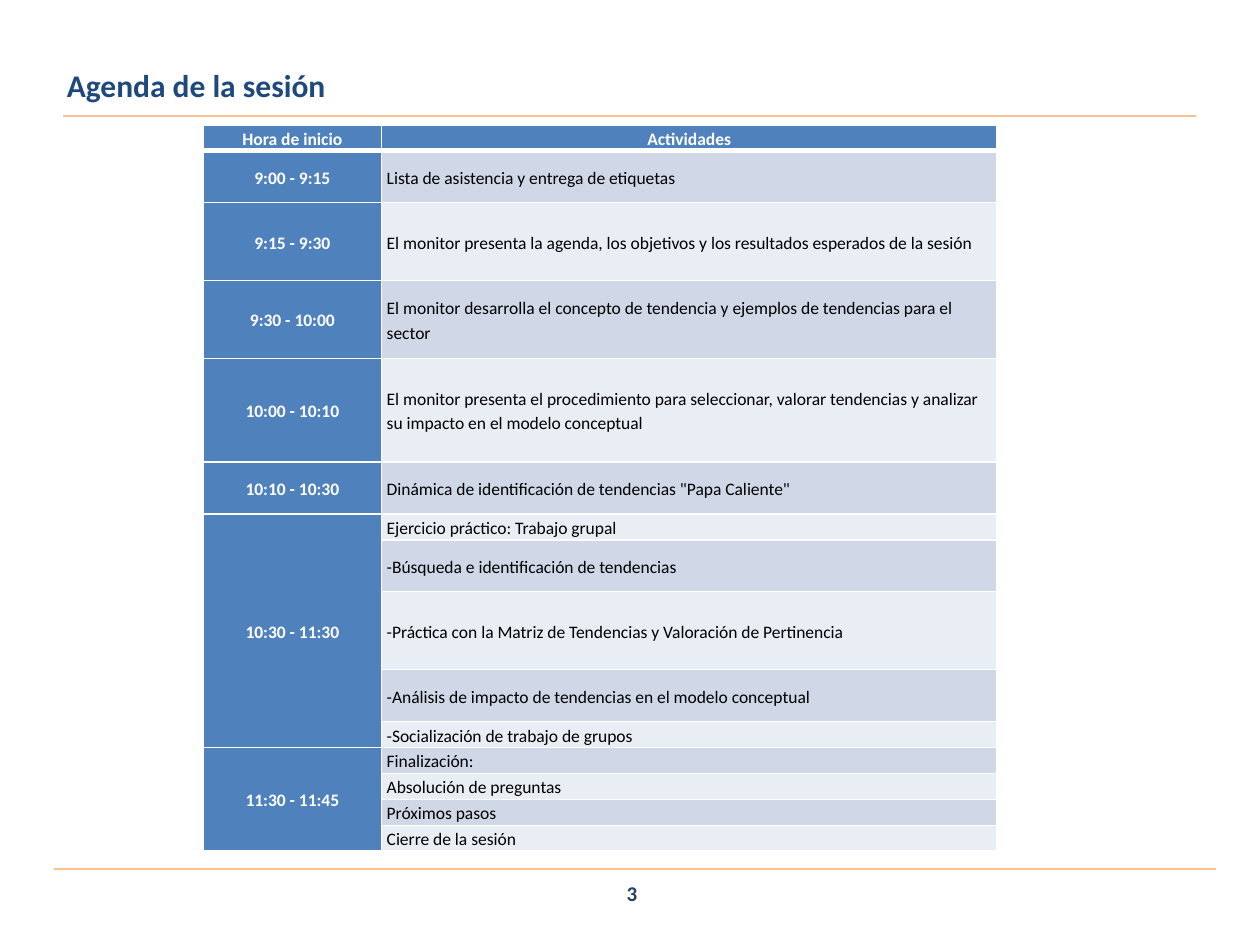
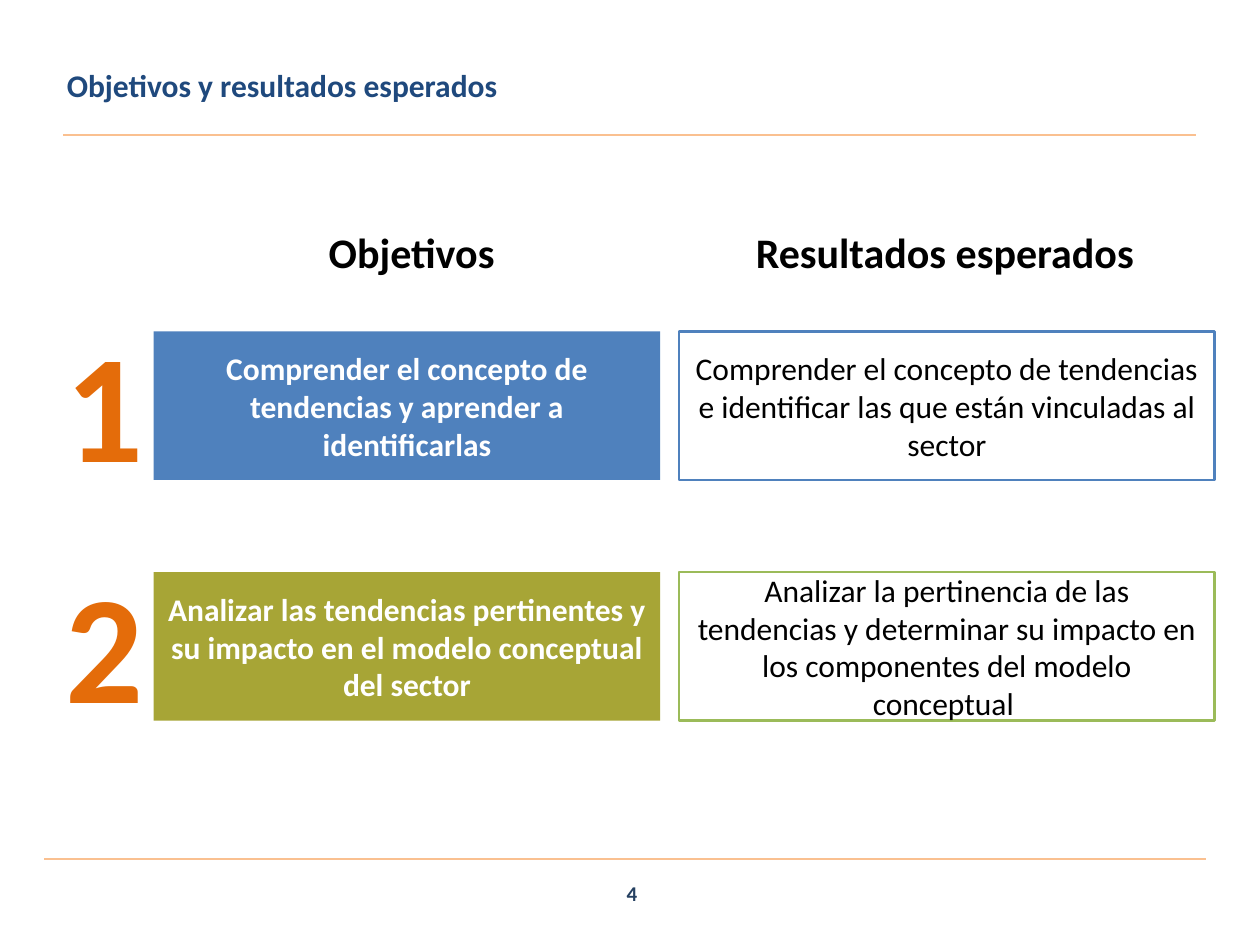
from lxml import etree
from pptx import Presentation
from pptx.dml.color import RGBColor
from pptx.enum.shapes import MSO_CONNECTOR, MSO_SHAPE
from pptx.enum.text import MSO_ANCHOR as ANCHOR, PP_ALIGN as ALIGN
from pptx.oxml.ns import qn
from pptx.util import Inches, Pt

FONT = "Calibri"
NAVY, DEEP_NAVY, BLUE = "1F497D", "254061", "4F81BD"
PEACH, ORANGE, OLIVE, GREEN = "FAC090", "E46C0A", "A7A536", "9BBB59"
BANDS = ("D0D8E8", "E9EDF4")
WHITE, BLACK = "FFFFFF", "000000"

ROW_UNIT = 0.206
# Each slot: start hour, then its activities with their height in row units
AGENDA = [
    ("9:00 - 9:15", [("Lista de asistencia y entrega de etiquetas", 2)]),
    ("9:15 - 9:30", [("El monitor presenta la agenda, los objetivos y los "
                      "resultados esperados de la sesión", 3)]),
    ("9:30 - 10:00", [("El monitor desarrolla el concepto de tendencia y "
                       "ejemplos de tendencias para el sector", 3)]),
    ("10:00 - 10:10", [("El monitor presenta el procedimiento para seleccionar, "
                        "valorar tendencias y analizar su impacto en el modelo "
                        "conceptual", 4)]),
    ("10:10 - 10:30", [('Dinámica de identificación de tendencias "Papa Caliente"', 2)]),
    ("10:30 - 11:30", [("Ejercicio práctico: Trabajo grupal", 1),
                       ("-Búsqueda e identificación de tendencias", 2),
                       ("-Práctica con la Matriz de Tendencias y Valoración de "
                        "Pertinencia", 3),
                       ("-Análisis de impacto de tendencias en el modelo conceptual", 2),
                       ("-Socialización de trabajo de grupos", 1)]),
    ("11:30 - 11:45", [("Finalización:", 1), ("Absolución de preguntas", 1),
                       ("Próximos pasos", 1), ("Cierre de la sesión", 1)]),
]

# Number, objective, its fill, expected result, its outline
GOALS = [
    ("1", "Comprender el concepto de tendencias y aprender a identificarlas", BLUE,
     "Comprender el concepto de tendencias e identificar las que están "
     "vinculadas al sector", BLUE),
    ("2", "Analizar las tendencias pertinentes y su impacto en el modelo "
     "conceptual del sector", OLIVE,
     "Analizar la pertinencia de las tendencias y determinar su impacto en los "
     "componentes del modelo conceptual ", GREEN),
]


def rgb(color):
    return RGBColor.from_string(color)


def set_borders(cell, **widths):
    """White cell borders, 1 pt unless a side (L, R, T, B) is given."""
    tcPr = cell._tc.get_or_add_tcPr()
    for i, side in enumerate("LRTB"):
        ln = etree.Element(qn(f"a:ln{side}"), w=str(Pt(widths.get(side, 1))))
        fill = etree.SubElement(ln, qn("a:solidFill"))
        etree.SubElement(fill, qn("a:srgbClr"), val=WHITE)
        tcPr.insert(i, ln)


class Deck:
    def __init__(self):
        self.prs = Presentation()
        self.prs.slide_width, self.prs.slide_height = Inches(10), Inches(7.5)
        self.s = None

    def put_text(self, tf, text, size, color=BLACK, bold=False, align=ALIGN.CENTER,
                 anchor=ANCHOR.MIDDLE, **paragraph):
        tf.word_wrap = True
        tf.vertical_anchor = anchor
        p = tf.paragraphs[0]
        for name, value in dict(alignment=align, **paragraph).items():
            setattr(p, name, value)
        r = p.add_run()
        r.text = text
        for name, value in dict(name=FONT, size=Pt(size), bold=bold).items():
            setattr(r.font, name, value)
        r.font.color.rgb = rgb(color)

    def slide(self, title, number, top_rule, bottom_rule, bottom_left):
        self.s = self.prs.slides.add_slide(self.prs.slide_layouts[5])
        sp = self.s.shapes.title
        place = dict(left=0.43, top=0.44, width=8.99, height=0.47)
        for name, value in place.items():
            setattr(sp, name, Inches(value))
        self.put_text(sp.text_frame, title, 18, NAVY, True, ALIGN.JUSTIFY,
                      space_before=Pt(3.6))
        self.rule(0.5, top_rule, 8.99)
        self.rule(bottom_left, bottom_rule, 9.22)
        self.text(number, 3.85, 6.89, 2.33, 0.4, size=12, color=DEEP_NAVY,
                  anchor=ANCHOR.MIDDLE)

    def rule(self, x, y, width):
        line = self.s.shapes.add_connector(
            MSO_CONNECTOR.STRAIGHT, Inches(x), Inches(y), Inches(x + width), Inches(y))
        line.line.color.rgb = rgb(PEACH)
        line.line.width = Pt(1.25)
        etree.SubElement(line._element.spPr, qn("a:effectLst"))

    def text(self, text, x, y, w, h, size, color=BLACK, anchor=ANCHOR.TOP,
             align=ALIGN.CENTER):
        sp = self.s.shapes.add_textbox(Inches(x), Inches(y), Inches(w), Inches(h))
        self.put_text(sp.text_frame, text, size, color, True, align, anchor)

    def box(self, text, x, y, w, h, fill=None, outline=None):
        sp = self.s.shapes.add_shape(
            MSO_SHAPE.RECTANGLE, Inches(x), Inches(y), Inches(w), Inches(h))
        sp.shadow.inherit = False
        if fill:
            sp.fill.solid()
            sp.fill.fore_color.rgb = rgb(fill)
        else:
            sp.fill.background()
        if outline:
            sp.line.color.rgb = rgb(outline)
            sp.line.width = Pt(1.5)
        else:
            sp.line.fill.background()
        self.put_text(sp.text_frame, text, 18, WHITE if fill else BLACK, bool(fill))

    def cell(self, cell, text, fill, header=True, align=ALIGN.CENTER, **borders):
        margins = dict(margin_left=0.04, margin_right=0.04, margin_top=0, margin_bottom=0)
        for name, value in margins.items():
            setattr(cell, name, Inches(value))
        cell.vertical_anchor = ANCHOR.MIDDLE
        cell.fill.solid()
        cell.fill.fore_color.rgb = rgb(fill)
        set_borders(cell, **borders)
        if text:
            self.put_text(cell.text_frame, text, 10, WHITE if header else BLACK, header,
                          align, anchor=None, line_spacing=1.15)

    def agenda(self, x, y, widths):
        units = [1] + [u for _, activities in AGENDA for _, u in activities]
        table = self.s.shapes.add_table(
            len(units), 2, Inches(x), Inches(y), Inches(sum(widths)),
            Inches(ROW_UNIT * sum(units))).table
        for column, width in zip(table.columns, widths):
            column.width = Inches(width)
        for row, unit in zip(table.rows, units):
            row.height = Inches(ROW_UNIT * unit)
        for c, heading in enumerate(("Hora de inicio", "Actividades")):
            self.cell(table.cell(0, c), heading, BLUE, B=3)
        row = 1
        for hour, activities in AGENDA:
            first = row
            for activity, _ in activities:
                top = 3 if row == 1 else 1
                self.cell(table.cell(row, 0), hour if row == first else "", BLUE, T=top)
                self.cell(table.cell(row, 1), activity, BANDS[(row - 1) % 2], False,
                          ALIGN.LEFT, T=top)
                row += 1
            if row - first > 1:
                table.cell(first, 0).merge(table.cell(row - 1, 0))


def main():
    deck = Deck()

    deck.slide("Agenda de la sesión", "3", top_rule=0.92, bottom_rule=6.9,
               bottom_left=0.43)
    deck.agenda(1.61, 0.99, (1.42, 4.88))

    deck.slide("Objetivos y resultados esperados", "4", top_rule=1.07,
               bottom_rule=6.82, bottom_left=0.35)
    deck.text("Objetivos ", 2.24, 1.75, 2.13, 0.5, size=24)
    deck.text("Resultados esperados", 5.9, 1.75, 3.32, 0.5, size=24, align=ALIGN.LEFT)
    for i, (number, objective, fill, result, outline) in enumerate(GOALS):
        y = 2.63 + 1.91 * i
        deck.text(number, 0.28, y - 0.23, 1.1, 1.58, size=88, color=ORANGE)
        deck.box(objective, 1.22, y, 4.02, 1.18, fill=fill)
        deck.box(result, 5.39, y, 4.25, 1.18, outline=outline)

    deck.prs.save("out.pptx")


if __name__ == "__main__":
    main()
